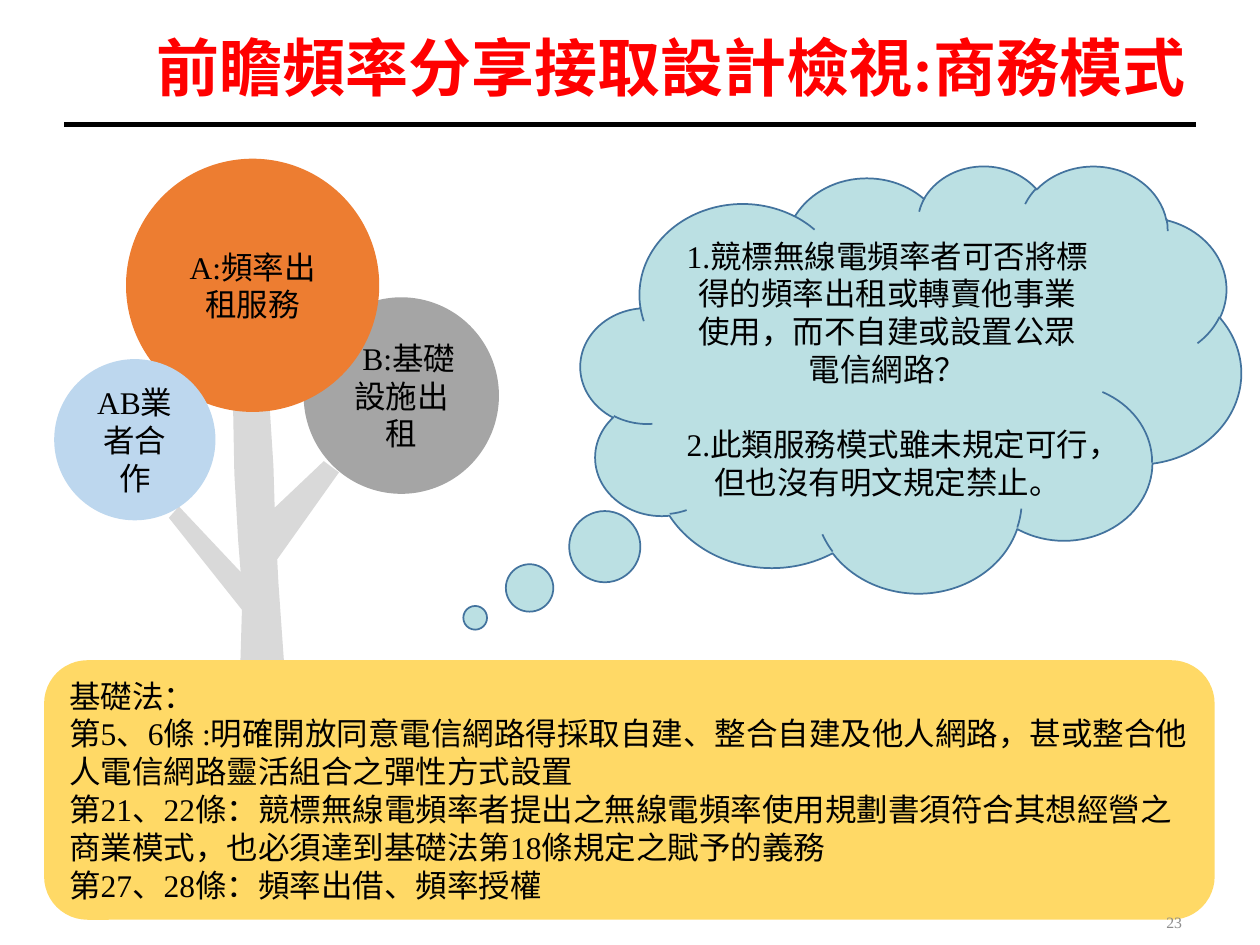
from pptx import Presentation
from pptx.dml.color import RGBColor
from pptx.enum.shapes import MSO_CONNECTOR, MSO_SHAPE
from pptx.enum.text import MSO_ANCHOR, PP_ALIGN
from pptx.oxml.ns import qn
from pptx.util import Inches, Pt

LEFT, CENTER, RIGHT = PP_ALIGN.LEFT, PP_ALIGN.CENTER, PP_ALIGN.RIGHT
MIDDLE = MSO_ANCHOR.MIDDLE
OVAL, ROUNDED, CLOUD = MSO_SHAPE.OVAL, MSO_SHAPE.ROUNDED_RECTANGLE, MSO_SHAPE.CLOUD_CALLOUT

THEME = {
    "font": "Times New Roman",
    "title_size": 36, "body_size": 18, "number_size": 9,
    "title": "FF0000", "text": "000000", "number": "8C8C8C", "rule": "000000",
    "trunk": "D9D9D9", "orange": "ED7D31", "gray": "A5A5A5", "blue": "BDD7EE",
    "law": "FFD966", "cloud": "BBE0E3", "cloud_line": "43739E",
}

TITLE = "前瞻頻率分享接取設計檢視:商務模式"
PAGE_NUMBER = "23"
# text, (left, top, width, height), fill, first-line indent
CROWNS = [
    ("B:基礎設施出租", (2.41, 2.36, 1.55, 1.56), "gray", 0.12),
    ("A:頻率出租服務", (1, 1.26, 2.01, 2.01), "orange", 0),
    ("AB業者合作", (0.43, 2.85, 1.28, 1.28), "blue", 0),
]
TRUNK = [
    (1.85, 3.24), (2.14, 3.23), (2.17, 3.7), (2.18, 4.03), (2.57, 3.66), (2.69, 3.75),
    (2.2, 4.44), (2.21, 4.63), (2.26, 5.34), (2.34, 6.03), (1.85, 6.03), (1.9, 5.52),
    (1.92, 4.84), (1.34, 4.11), (1.42, 4.02), (1.91, 4.54), (1.89, 4.29), (1.86, 3.76),
]
LAW = [
    "基礎法：",
    "第5、6條 :明確開放同意電信網路得採取自建、整合自建及他人網路，甚或整合他人電信網路靈活組合之彈性方式設置",
    "第21、22條：競標無線電頻率者提出之無線電頻率使用規劃書須符合其想經營之商業模式，也必須達到基礎法第18條規定之賦予的義務",
    "第27、28條：頻率出借、頻率授權",
]
QUESTIONS = [
    "1.競標無線電頻率者可否將標得的頻率出租或轉賣他事業使用，而不自建或設置公眾電信網路？",
    "2.此類服務模式雖未規定可行，但也沒有明文規定禁止。",
]


def color(name):
    return RGBColor.from_string(THEME[name])


def write(shape, lines, size="body_size", ink="text", align=CENTER, bold=False,
          gap=0, indent=0, spacing=None):
    frame = shape.text_frame
    frame.word_wrap = True
    frame.vertical_anchor = MIDDLE
    for index, line in enumerate(lines):
        para = frame.add_paragraph() if index else frame.paragraphs[0]
        para.alignment = align
        if index and gap:
            para.space_before = Pt(gap)
        if spacing:
            para.line_spacing = spacing
        if indent:
            para._p.get_or_add_pPr().set("indent", str(Inches(indent)))
        span = para.add_run()
        span.text = line
        span.font.name = THEME["font"]
        span.font.size = Pt(THEME[size])
        span.font.bold = bold
        span.font.color.rgb = color(ink)


def paint(shape, fill, line=None):
    shape.shadow.inherit = False
    shape.fill.solid()
    shape.fill.fore_color.rgb = color(fill)
    if line:
        shape.line.color.rgb = color(line)
        shape.line.width = Pt(1)
    else:
        shape.line.fill.background()


def add_panel(page, kind, place, fill, line=None):
    panel = page.shapes.add_shape(kind, *map(Inches, place))
    paint(panel, fill, line)
    return panel


def add_rule(page):
    rule = page.shapes.add_connector(
        MSO_CONNECTOR.STRAIGHT, Inches(0.51), Inches(0.99), Inches(9.49), Inches(0.99))
    rule.line.color.rgb = color("rule")
    rule.line.width = Pt(2.75)
    properties = rule._element.spPr
    properties.append(properties.makeelement(qn("a:effectLst"), {}))


def add_tree(page):
    points = [(Inches(x), Inches(y)) for x, y in TRUNK]
    builder = page.shapes.build_freeform(*points[0])
    builder.add_line_segments(points[1:], close=True)
    paint(builder.convert_to_shape(), "trunk")
    for text, place, fill, indent in CROWNS:
        write(add_panel(page, OVAL, place, fill), [text], indent=indent)


def main():
    deck = Presentation()
    deck.slide_width, deck.slide_height = Inches(10), Inches(7.5)
    page = deck.slides.add_slide(deck.slide_layouts[5])

    add_rule(page)
    add_tree(page)
    write(add_panel(page, ROUNDED, (0.35, 5.24, 9.29, 2.06), "law"), LAW, align=LEFT)

    cloud = add_panel(page, CLOUD, (4.61, 1.31, 5.24, 3.39), "cloud", "cloud_line")
    cloud.adjustments[0], cloud.adjustments[1] = -0.66, 0.56
    write(cloud, QUESTIONS, gap=21.5)

    title = page.shapes.title
    title.left, title.top, title.width, title.height = map(Inches, (1.14, 0.14, 9, 0.85))
    write(title, [TITLE], size="title_size", ink="title", align=LEFT, bold=True, spacing=0.9)

    number = page.shapes.add_textbox(*map(Inches, (7.23, 7.12, 2.25, 0.4)))
    write(number, [PAGE_NUMBER], size="number_size", ink="number", align=RIGHT)

    deck.save("out.pptx")


if __name__ == "__main__":
    main()
